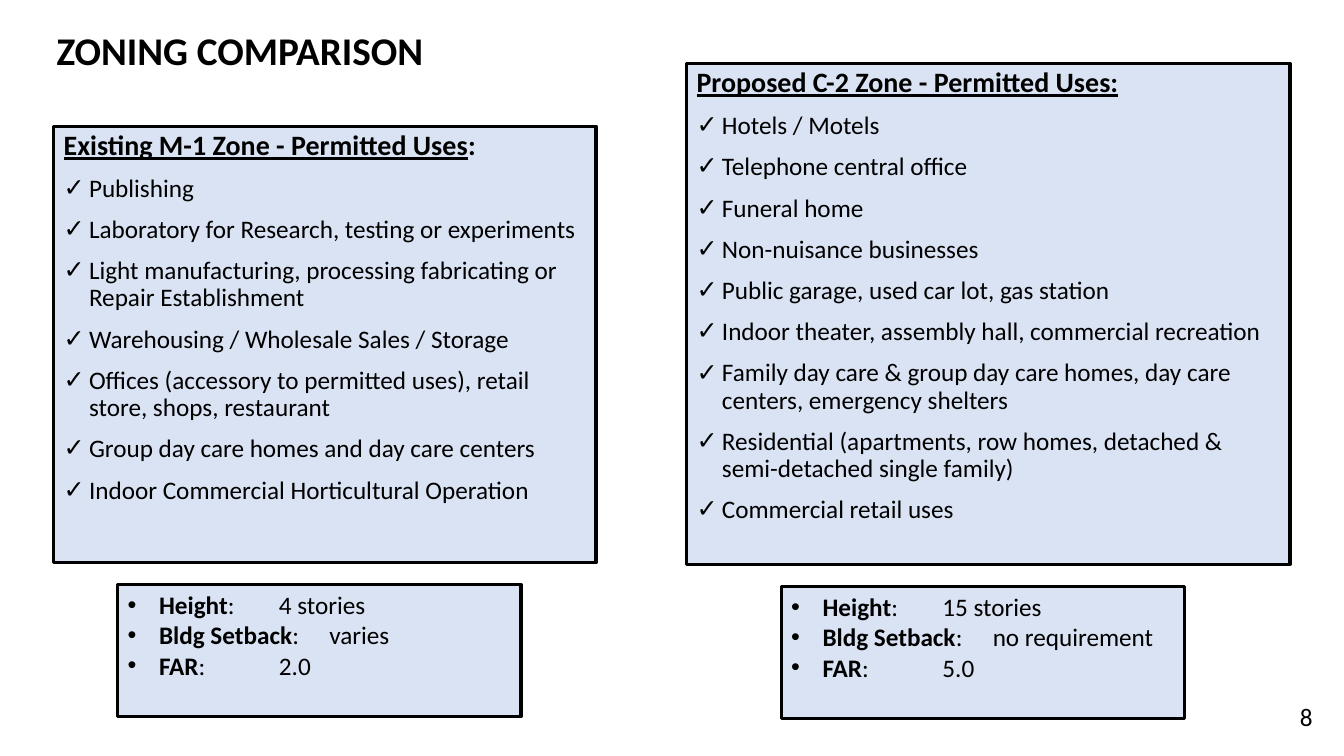
from dataclasses import dataclass

from lxml.etree import SubElement
from pptx import Presentation
from pptx.dml.color import RGBColor
from pptx.enum.shapes import MSO_SHAPE
from pptx.enum.text import MSO_ANCHOR, MSO_AUTO_SIZE, PP_ALIGN
from pptx.oxml.ns import qn
from pptx.util import Cm, Pt

BLACK = RGBColor(0x00, 0x00, 0x00)
PALE_BLUE = RGBColor(0xDA, 0xE3, 0xF3)
FONT = "Calibri"
TWO_CONTENT_LAYOUT = 3


@dataclass
class Box:
    left: float
    top: float
    width: float
    height: float


@dataclass
class Zone:
    heading: str
    heading_end: str  # part of the heading that is not underlined
    uses: list[str]
    uses_box: Box
    limits: list[tuple[str, str]]
    limits_box: Box


ZONES = [
    Zone(
        "Existing M-1 Zone - Permitted Uses", ":",
        [
            "Publishing",
            "Laboratory for Research, testing or experiments",
            "Light manufacturing, processing fabricating or Repair Establishment",
            "Warehousing / Wholesale Sales / Storage",
            "Offices (accessory to permitted uses), retail store, shops, restaurant",
            "Group day care homes and day care centers",
            "Indoor Commercial Horticultural Operation",
        ],
        Box(1.35, 3.18, 13.67, 11),
        [("Height", ":\t4 stories"), ("Bldg Setback", ":\tvaries"), ("FAR", ":\t\t2.0")],
        Box(2.97, 14.73, 10.16, 3.33),
    ),
    Zone(
        "Proposed C-2 Zone - Permitted Uses:", "",
        [
            "Hotels / Motels",
            "Telephone central office",
            "Funeral home",
            "Non-nuisance businesses",
            "Public garage, used car lot, gas station",
            "Indoor theater, assembly hall, commercial recreation",
            "Family day care & group day care homes, day care centers, emergency shelters",
            "Residential (apartments, row homes, detached & semi-detached single family)",
            "Commercial retail uses",
        ],
        Box(17.3, 1.6, 15.21, 12.62),
        [("Height", ":\t15 stories"), ("Bldg Setback", ":\tno requirement"), ("FAR", ":\t\t5.0")],
        Box(19.69, 14.78, 10.16, 3.33),
    ),
]


def place(shape, box: Box) -> None:
    shape.left, shape.top = Cm(box.left), Cm(box.top)
    shape.width, shape.height = Cm(box.width), Cm(box.height)


def style_panel(shape) -> None:
    shape.fill.solid()
    shape.fill.fore_color.rgb = PALE_BLUE
    shape.line.color.rgb = BLACK
    shape.line.width = Pt(2.25)


def set_frame(shape, wrap: bool = True):
    frame = shape.text_frame
    frame.word_wrap = wrap
    frame.auto_size = MSO_AUTO_SIZE.NONE
    frame.vertical_anchor = MSO_ANCHOR.TOP
    return frame


def next_paragraph(frame):
    first = frame.paragraphs[0]
    return frame.add_paragraph() if first.runs else first


def set_bullet(paragraph, character: str = "", indent: float = 0) -> None:
    properties = paragraph._p.get_or_add_pPr()
    properties.set("marL", str(Cm(indent)))
    properties.set("indent", str(-Cm(indent)))
    if character:
        SubElement(properties, qn("a:buFont")).set("typeface", "Arial")
        SubElement(properties, qn("a:buChar")).set("char", character)
    else:
        SubElement(properties, qn("a:buNone"))


def set_font(paragraph, size: float, bold: bool | None = None) -> None:
    paragraph.alignment = PP_ALIGN.LEFT
    font = paragraph.font
    font.name, font.size, font.bold = FONT, Pt(size), bold
    font.color.rgb = BLACK


def add_run(paragraph, text: str, bold: bool | None = None, underline: bool | None = None) -> None:
    run = paragraph.add_run()
    run.text = text
    run.font.bold, run.font.underline = bold, underline


def set_list_spacing(paragraph) -> None:
    paragraph.line_spacing = 0.9
    paragraph.space_before = Pt(10)


def fill_uses(placeholder, zone: Zone) -> None:
    place(placeholder, zone.uses_box)
    style_panel(placeholder)
    frame = set_frame(placeholder)

    heading = next_paragraph(frame)
    set_bullet(heading)
    set_list_spacing(heading)
    set_font(heading, 20, bold=True)
    add_run(heading, zone.heading, underline=True)
    if zone.heading_end:
        add_run(heading, zone.heading_end)

    for use in zone.uses:
        paragraph = next_paragraph(frame)
        set_bullet(paragraph, "✓", 0.64)
        set_list_spacing(paragraph)
        set_font(paragraph, 18)
        add_run(paragraph, use)


def add_limits(slide, zone: Zone) -> None:
    panel = slide.shapes.add_shape(MSO_SHAPE.RECTANGLE, 0, 0, 0, 0)
    place(panel, zone.limits_box)
    panel.shadow.inherit = False
    style_panel(panel)
    frame = set_frame(panel)
    for label, value in zone.limits:
        paragraph = next_paragraph(frame)
        set_bullet(paragraph, "•", 0.79)
        set_font(paragraph, 18)
        add_run(paragraph, label, bold=True)
        add_run(paragraph, value, bold=False)


def main() -> None:
    presentation = Presentation()
    presentation.slide_width, presentation.slide_height = Cm(33.87), Cm(19.05)
    slide = presentation.slides.add_slide(presentation.slide_layouts[TWO_CONTENT_LAYOUT])

    # Title
    title = slide.shapes.title
    place(title, Box(1.17, 0.53, 9.8, 1.45))
    title_paragraph = set_frame(title).paragraphs[0]
    set_font(title_paragraph, 28, bold=True)
    add_run(title_paragraph, "ZONING COMPARISON")

    # Permitted uses and building limits of each zone
    bodies = [shape for shape in slide.placeholders if shape.placeholder_format.idx > 0]
    for body, zone in zip(bodies, ZONES):
        fill_uses(body, zone)
        add_limits(slide, zone)

    # Page number
    number = slide.shapes.add_textbox(0, 0, 0, 0)
    place(number, Box(32.51, 17.55, 0.84, 1.02))
    number_paragraph = set_frame(number, wrap=False).paragraphs[0]
    set_font(number_paragraph, 18)
    add_run(number_paragraph, "8")

    presentation.save("out.pptx")


if __name__ == "__main__":
    main()
